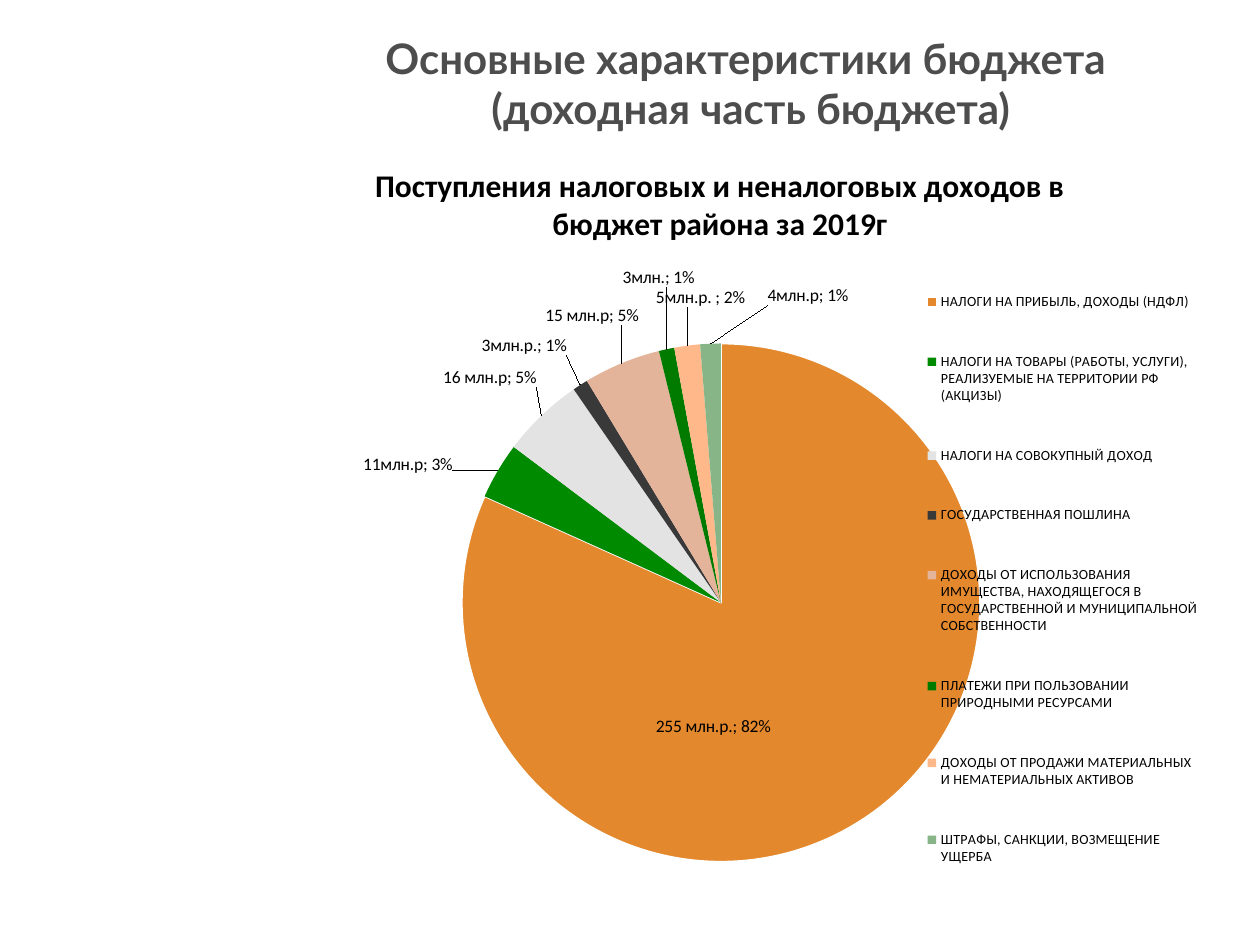
"""Build the slide with the district budget revenue pie chart."""
from lxml.etree import SubElement
from pptx import Presentation
from pptx.chart.data import CategoryChartData
from pptx.dml.color import RGBColor
from pptx.enum.chart import XL_CHART_TYPE, XL_LABEL_POSITION, XL_LEGEND_POSITION
from pptx.enum.text import MSO_ANCHOR, PP_ALIGN
from pptx.oxml.ns import qn
from pptx.util import Pt

COLORS = {
    "heading": "4D4D4D", "black": "000000", "white": "FFFFFF",
    "orange": "E3882D", "green": "008A00", "light gray": "E3E3E3",
    "dark gray": "393939", "beige": "E3B39A", "deep green": "007B00",
    "peach": "FFB88A", "pale green": "87B587",
}
REVENUES = [
    ("НАЛОГИ НА ПРИБЫЛЬ, ДОХОДЫ (НДФЛ)", 255, "orange", "255 млн.р.; 82%", -0.08, 0.02),
    ("НАЛОГИ НА ТОВАРЫ (РАБОТЫ, УСЛУГИ), РЕАЛИЗУЕМЫЕ НА ТЕРРИТОРИИ РФ (АКЦИЗЫ)",
     11, "green", "11млн.р; 3%", -0.04, 0.01),
    ("НАЛОГИ НА СОВОКУПНЫЙ ДОХОД", 16, "light gray", "16 млн.р; 5%", 0, -0.03),
    ("ГОСУДАРСТВЕННАЯ ПОШЛИНА", 3, "dark gray", "3млн.р.; 1%", -0.01, -0.03),
    ("ДОХОДЫ ОТ ИСПОЛЬЗОВАНИЯ ИМУЩЕСТВА, НАХОДЯЩЕГОСЯ В ГОСУДАРСТВЕННОЙ И МУНИЦИПАЛЬНОЙ СОБСТВЕННОСТИ",
     15, "beige", "15 млн.р; 5%", 0.02, -0.04),
    ("ПЛАТЕЖИ ПРИ ПОЛЬЗОВАНИИ ПРИРОДНЫМИ РЕСУРСАМИ", 3, "deep green", "3млн.; 1%", 0.03, -0.07),
    ("ДОХОДЫ ОТ ПРОДАЖИ МАТЕРИАЛЬНЫХ И НЕМАТЕРИАЛЬНЫХ АКТИВОВ",
     5, "peach", "5млн.р. ; 2%", 0.06, -0.04),
    ("ШТРАФЫ, САНКЦИИ, ВОЗМЕЩЕНИЕ УЩЕРБА", 4, "pale green", "4млн.р; 1%", 0.1, -0.04),
]


def style_font(font, name, size, color, bold=False):
    font.name = name
    font.size = Pt(size)
    font.bold = bold
    font.color.rgb = RGBColor.from_string(COLORS[color])


def place(element, index, **settings):
    for old_layout in element.findall(qn("c:layout")):
        element.remove(old_layout)
    layout = SubElement(element, qn("c:layout"))
    element.insert(index, layout)
    manual = SubElement(layout, qn("c:manualLayout"))
    for tag, value in settings.items():
        SubElement(manual, qn(f"c:{tag}")).set("val", str(value))


presentation = Presentation()
presentation.slide_width = Pt(720)
presentation.slide_height = Pt(540)
slide = presentation.slides.add_slide(presentation.slide_layouts[6])

heading = slide.shapes.add_textbox(Pt(156), Pt(18), Pt(546), Pt(88))
text_frame = heading.text_frame
text_frame.word_wrap = True
text_frame.vertical_anchor = MSO_ANCHOR.TOP
text_frame.margin_top = Pt(0.5)
text_frame.text = "Основные характеристики бюджета \n(доходная часть бюджета)"
for paragraph in text_frame.paragraphs:
    paragraph.alignment = PP_ALIGN.CENTER
    style_font(paragraph.runs[0].font, "Lato", 24, "heading", True)

chart_data = CategoryChartData()
chart_data.categories = [revenue[0] for revenue in REVENUES]
chart_data.add_series("Series 1", [revenue[1] for revenue in REVENUES])
chart = slide.shapes.add_chart(
    XL_CHART_TYPE.PIE, Pt(133), Pt(77), Pt(558), Pt(442), chart_data).chart
style_font(chart.font, "Calibri", 10, "black")

chart.has_title = True
title_frame = chart.chart_title.text_frame
title_frame.text = "Поступления налоговых и неналоговых доходов в бюджет района за 2019г"
style_font(title_frame.paragraphs[0].runs[0].font, "Calibri", 18, "black", True)
place(chart.chart_title._element, 1, xMode="edge", yMode="edge", x=0.14, y=0.03)

chart.has_legend = True
legend = chart.legend
legend.position = XL_LEGEND_POSITION.TOP
legend.include_in_layout = True
style_font(legend.font, "Calibri", 8, "black")
place(legend._element, 1, xMode="edge", yMode="edge", x=0.71, y=0.15, w=0.28, h=0.85)

plot = chart.plots[0]
plot.vary_by_categories = True
place(chart._chartSpace.chart.plotArea, 0, layoutTarget="inner",
      xMode="edge", yMode="edge", x=0, y=0.27, w=1, h=0.67)

series = plot.series[0]
data_labels = series.data_labels
data_labels.show_value = True
data_labels.show_percentage = True
style_font(data_labels.font, "Calibri", 10, "black")

points = series.points
for index, (category, value, color, caption, shift_x, shift_y) in enumerate(REVENUES):
    point = points[index]
    point.format.fill.solid()
    point.format.fill.fore_color.rgb = RGBColor.from_string(COLORS[color])
    point.format.line.fill.background()
    label = point.data_label
    label.text_frame.text = caption
    style_font(label.text_frame.paragraphs[0].runs[0].font, "Calibri", 10, "black")
    label.position = XL_LABEL_POSITION.OUTSIDE_END if index else XL_LABEL_POSITION.CENTER
    label_element = label._get_or_add_dLbl()
    label_element.find(qn("c:showPercent")).set("val", "1")
    place(label_element, 1, x=shift_x, y=shift_y)

largest_line = points[0].format.line
largest_line.color.rgb = RGBColor.from_string(COLORS["white"])
largest_line.width = Pt(1)

presentation.save("out.pptx")
